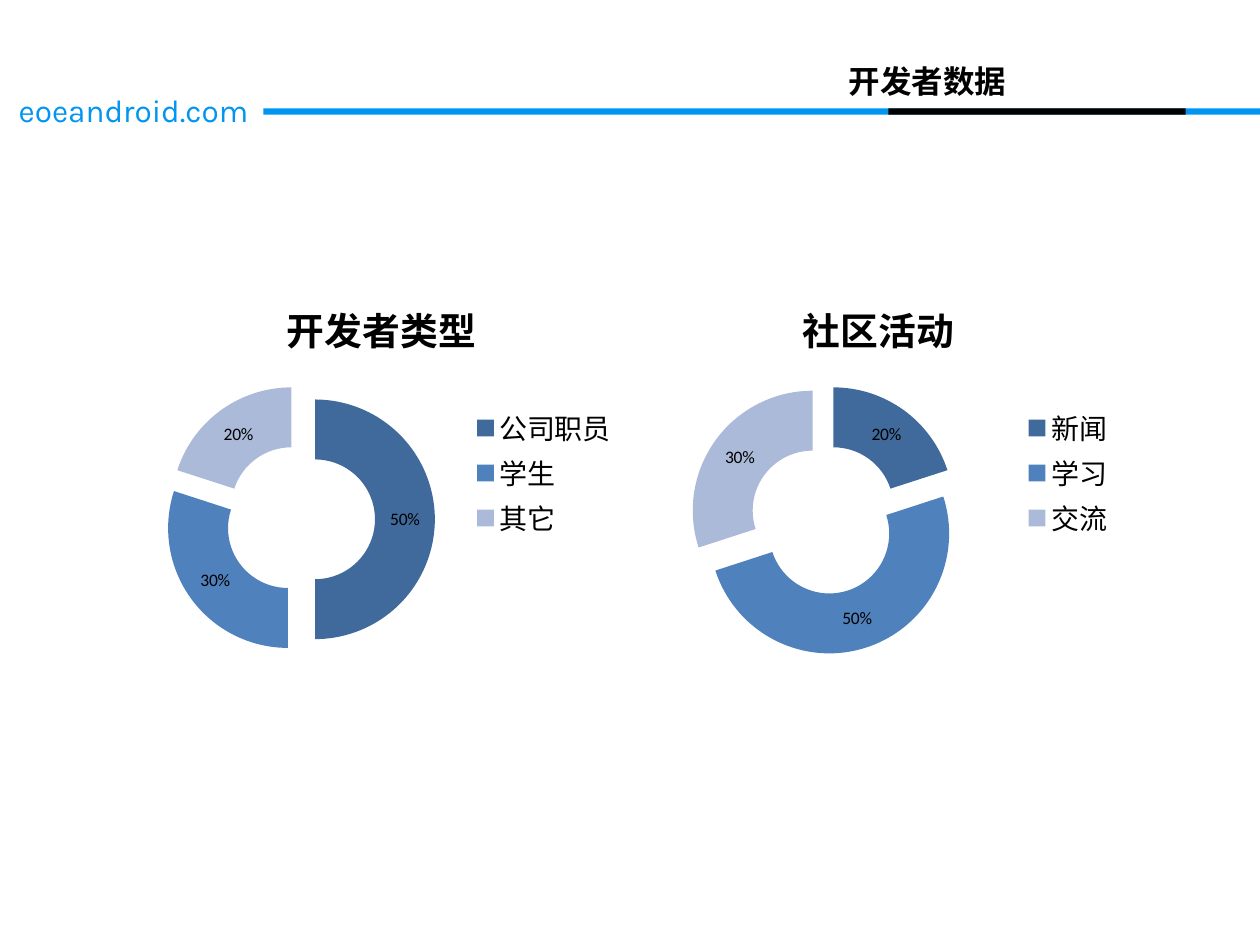
from dataclasses import dataclass

from pptx import Presentation
from pptx.chart.data import CategoryChartData
from pptx.dml.color import RGBColor
from pptx.enum import chart as ch, shapes, text
from pptx.oxml.ns import qn
from pptx.util import Inches, Pt
from lxml import etree


@dataclass(frozen=True)
class Theme:
    blue: str = "0095F0"
    black: str = "000000"
    rings: tuple = ("406A9B", "4F81BD", "ABBAD8")
    cjk: str = "Noto Sans CJK SC"
    site: str = "Karla"
    body: str = "Calibri"
    head: float = 18
    title: float = 21.6
    key: float = 16
    label: float = 10


T = Theme()


def style(font, name, size, color=T.black, bold=False):
    font.name, font.size, font.bold = name, Pt(size), bold
    font.color.rgb = RGBColor.from_string(color)


def set_asian(root):
    """Give East Asian glyphs the same face as the Latin ones."""
    for latin in list(root.iter(qn("a:latin"))):
        if latin.get("typeface") == T.cjk:
            ea = etree.Element(qn("a:ea"), typeface=T.cjk)
            latin.addnext(ea)


def add_text(slide, box, words, align, **look):
    shape = slide.shapes.add_textbox(*map(Inches, box))
    frame = shape.text_frame
    frame.word_wrap = True
    frame.auto_size = text.MSO_AUTO_SIZE.SHAPE_TO_FIT_TEXT
    para = frame.paragraphs[0]
    para.text, para.alignment = words, align
    style(para.font, **look)


def add_bar(slide, box, color):
    bar = slide.shapes.add_shape(shapes.MSO_SHAPE.RECTANGLE, *map(Inches, box))
    bar.shadow.inherit = False
    bar.fill.solid()
    bar.fill.fore_color.rgb = RGBColor.from_string(color)
    bar.line.fill.background()


def add_header(slide, x, y, w):
    # Site name, rule and section marker
    add_text(slide, (x + 0.05, y + 0.23, 2.19, 0.7), "eoeandroid.com",
             text.PP_ALIGN.LEFT, name=T.site, size=T.head, color=T.blue)
    add_bar(slide, (x + 2.09, y + 0.42, w - 2.09, 0.05), T.blue)
    add_bar(slide, (x + 7.05, y + 0.42, 2.36, 0.05), T.black)
    # Section title
    add_text(slide, (x + 5, y, 4.72, 0.4), "开发者数据",
             text.PP_ALIGN.CENTER, name=T.cjk, size=T.head, bold=True)


def add_ring(slide, box, title, shares):
    data = CategoryChartData(number_format="0%")
    data.categories = list(shares)
    data.add_series("Series 1", list(shares.values()))
    chart = slide.shapes.add_chart(
        ch.XL_CHART_TYPE.DOUGHNUT_EXPLODED, *map(Inches, box), data).chart
    style(chart.font, T.body, T.head)

    # Title and legend
    chart.has_title = True
    para = chart.chart_title.text_frame.paragraphs[0]
    para.text = title
    style(para.font, T.cjk, T.title, bold=True)
    chart.has_legend = True
    chart.legend.position = ch.XL_LEGEND_POSITION.RIGHT
    chart.legend.include_in_layout = False
    style(chart.legend.font, T.cjk, T.key)

    # Slices and their values
    plot = chart.plots[0]
    plot.vary_by_categories = True
    for i, color in enumerate(T.rings):
        fill = plot.series[0].points[i].format.fill
        fill.solid()
        fill.fore_color.rgb = RGBColor.from_string(color)
    labels = plot.series[0].data_labels
    labels.show_value = True
    labels.show_percentage = False
    labels.number_format, labels.number_format_is_linked = "0%", False
    style(labels.font, T.body, T.label)
    set_asian(chart.element)


def main():
    prs = Presentation()
    prs.slide_width, prs.slide_height = Inches(10), Inches(7.5)
    slide = prs.slides.add_slide(prs.slide_layouts[6])
    add_header(slide, 0, 0.44, 10)

    # Two charts side by side
    rings = [
        ("开发者类型", {"公司职员": 0.5, "学生": 0.3, "其它": 0.2}),
        ("社区活动", {"新闻": 0.2, "学习": 0.5, "交流": 0.3}),
    ]
    wide = 3.94
    for i, (title, shares) in enumerate(rings):
        add_ring(slide, (1.06 + i * wide, 2.18, wide, 3.15), title, shares)

    set_asian(slide.element)
    prs.save("out.pptx")


if __name__ == "__main__":
    main()
